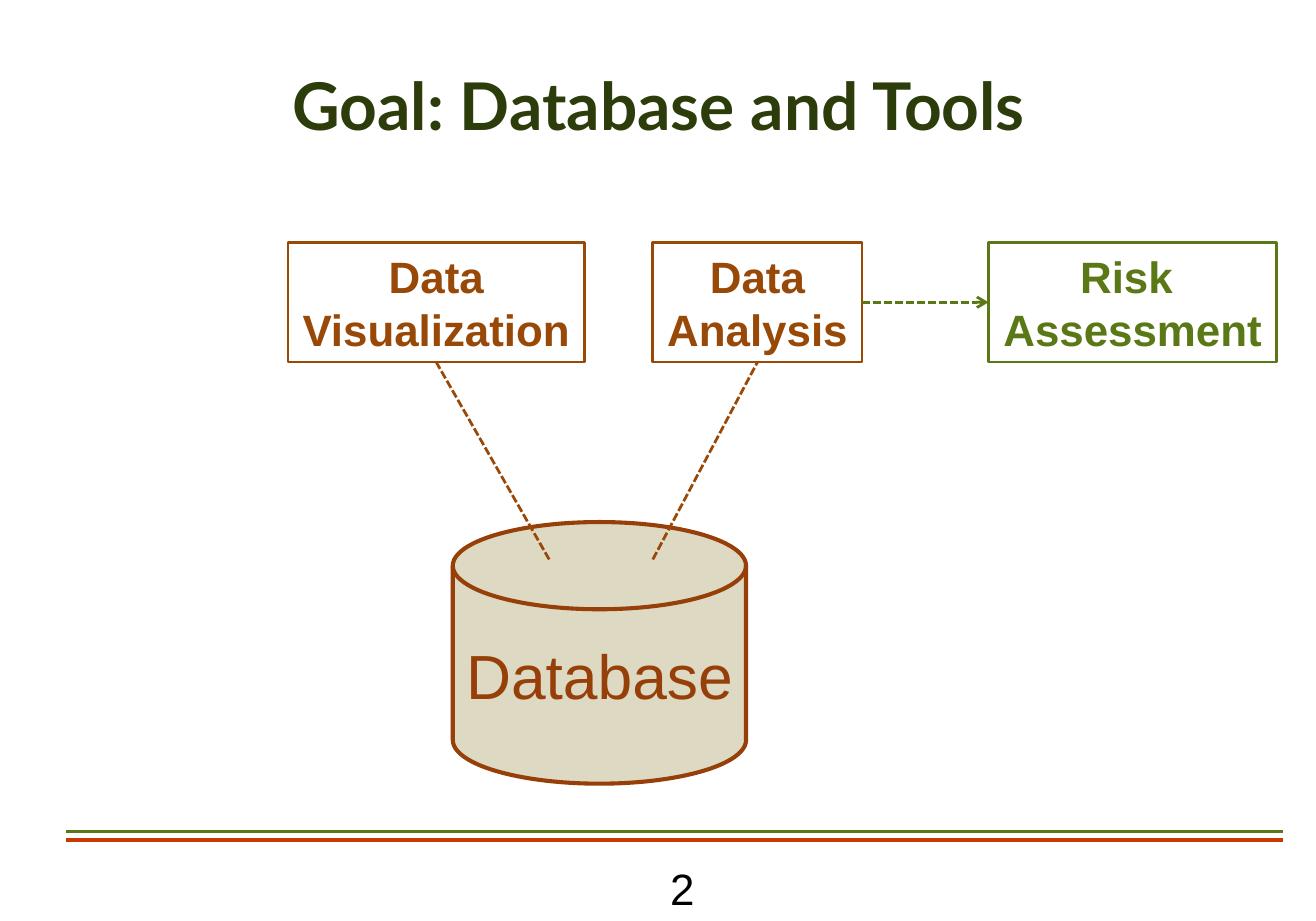
from lxml.etree import SubElement
from pptx import Presentation
from pptx.dml.color import RGBColor
from pptx.enum.dml import MSO_LINE
from pptx.enum.shapes import MSO_CONNECTOR, MSO_SHAPE
from pptx.enum.text import MSO_ANCHOR, PP_ALIGN
from pptx.oxml.ns import qn
from pptx.util import Cm, Pt

DARK_GREEN = RGBColor(0x2D, 0x3C, 0x0B)
GREEN = RGBColor(0x5B, 0x78, 0x17)
ORANGE = RGBColor(0xC8, 0x38, 0x01)
BROWN = RGBColor(0x98, 0x48, 0x07)
RUST = RGBColor(0x97, 0x3F, 0x08)
SAND = RGBColor(0xDD, 0xD9, 0xC3)
BLACK = RGBColor(0, 0, 0)

TOOL_TOP, TOOL_HEIGHT = 4.68, 2.31


def write(shape, text, size, color, font="Arial", bold=False,
          anchor=MSO_ANCHOR.MIDDLE, wrap=False):
    """Fill a shape with centred text, one paragraph per line."""
    frame = shape.text_frame
    frame.word_wrap = wrap
    frame.vertical_anchor = anchor
    frame.text = text
    for paragraph in frame.paragraphs:
        paragraph.alignment = PP_ALIGN.CENTER
        for run in paragraph.runs:
            run.font.name = font
            run.font.size = Pt(size)
            run.font.bold = bold
            run.font.color.rgb = color


def add_label(slide, text, left, top, width, height, **text_format):
    label = slide.shapes.add_textbox(Cm(left), Cm(top), Cm(width), Cm(height))
    write(label, text, wrap=True, **text_format)


def add_outlined(slide, kind, left, top, width, height, color, weight, fill=None):
    shape = slide.shapes.add_shape(kind, Cm(left), Cm(top), Cm(width), Cm(height))
    shape.shadow.inherit = False
    if fill is None:
        shape.fill.background()
    else:
        shape.fill.solid()
        shape.fill.fore_color.rgb = fill
    shape.line.color.rgb = color
    shape.line.width = Pt(weight)
    return shape


def add_tool(slide, text, left, width, color):
    tool = add_outlined(slide, MSO_SHAPE.RECTANGLE, left, TOOL_TOP, width,
                        TOOL_HEIGHT, color, 1.5)
    write(tool, text, size=24, color=color, bold=True)
    return tool


def add_line(slide, start, end, color, weight, dashed=False, arrow=False):
    line = slide.shapes.add_connector(MSO_CONNECTOR.STRAIGHT,
                                      *(Cm(value) for value in (*start, *end)))
    line.line.color.rgb = color
    line.line.width = Pt(weight)
    if dashed:
        line.line.dash_style = MSO_LINE.SQUARE_DOT
    if arrow:
        SubElement(line.line._get_or_add_ln(), qn("a:tailEnd"), type="arrow")
    SubElement(line._element.spPr, qn("a:effectLst"))
    return line


def main():
    deck = Presentation()
    deck.slide_width, deck.slide_height = Cm(25.4), Cm(17.78)
    slide = deck.slides.add_slide(deck.slide_layouts[6])

    # Footer rules and page number
    for y, color in ((16.05, GREEN), (16.21, ORANGE)):
        add_line(slide, (1.27, y), (24.77, y), color, 2)
    add_label(slide, "2", 10.21, 16.51, 5.92, 1.02, size=24, color=BLACK,
              anchor=MSO_ANCHOR.TOP)

    # Title
    add_label(slide, "Goal: Database and Tools", 0.89, 1.27, 23.65, 1.5,
              size=36, color=DARK_GREEN, font="Lato", bold=True)

    # Database
    database = add_outlined(slide, MSO_SHAPE.FLOWCHART_MAGNETIC_DISK,
                            8.74, 10.08, 5.66, 5.05, RUST, 2.25, SAND)
    write(database, "Database", size=34.1, color=RUST)

    # Tools
    visualization = add_tool(slide, "Data\nVisualization", 5.56, 5.72, BROWN)
    analysis = add_tool(slide, "Data\nAnalysis", 12.6, 4.04, BROWN)
    risk = add_tool(slide, "Risk \nAssessment", 19.08, 5.56, GREEN)

    # Links from the database to its tools
    for tool, x in ((visualization, 10.6), (analysis, 12.6)):
        link = add_line(slide, (x, 10.8), (x, TOOL_TOP + TOOL_HEIGHT), BROWN, 1.5,
                        dashed=True)
        link.end_connect(tool, 2)

    # Arrow from analysis to risk assessment
    middle = TOOL_TOP + TOOL_HEIGHT / 2
    arrow = add_line(slide, (16.64, middle), (19.08, middle), GREEN, 1.5,
                     dashed=True, arrow=True)
    arrow.begin_connect(analysis, 3)
    arrow.end_connect(risk, 1)

    deck.save("out.pptx")


if __name__ == "__main__":
    main()
